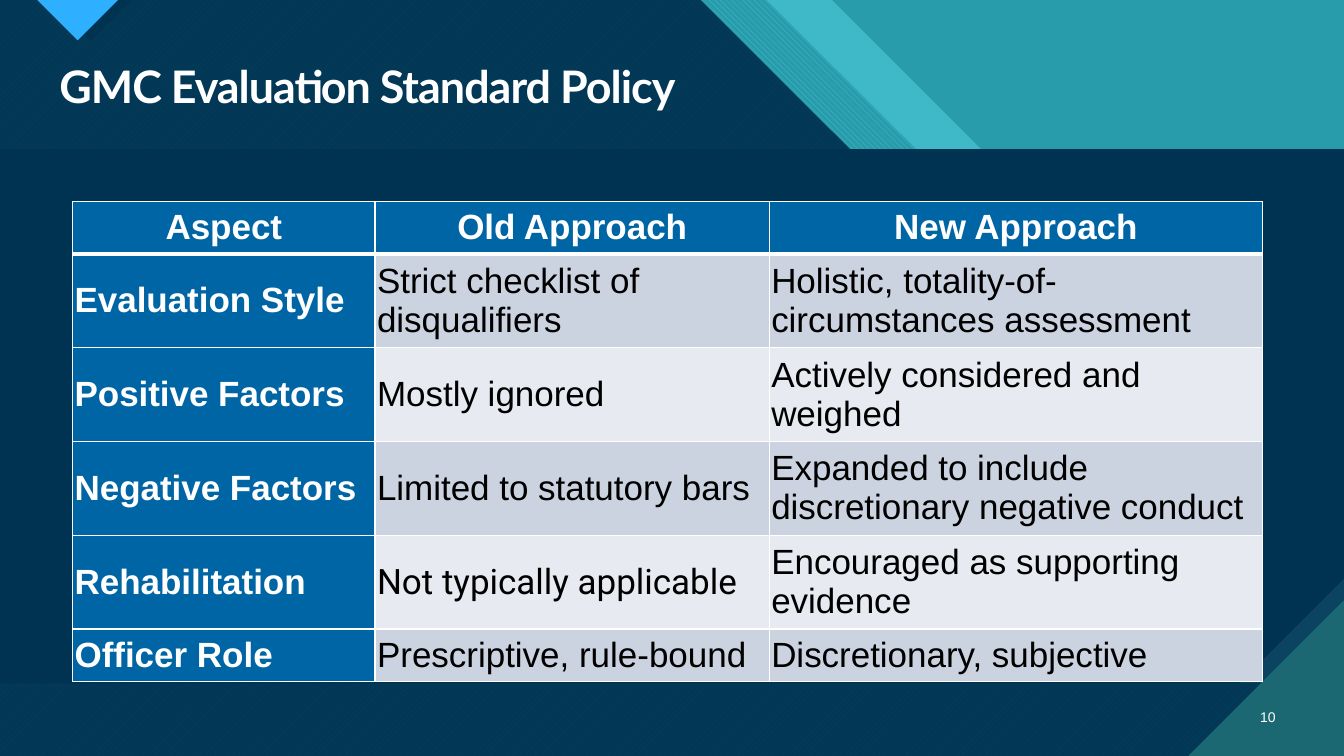
from dataclasses import dataclass
from typing import NamedTuple

from lxml.etree import SubElement
from pptx import Presentation
from pptx.dml.color import RGBColor
from pptx.enum.dml import MSO_PATTERN
from pptx.enum.text import MSO_ANCHOR, PP_ALIGN
from pptx.oxml.ns import qn
from pptx.util import Inches, Pt


@dataclass(frozen=True)
class Theme:
    navy: str = "003352"
    steel: str = "0C4360"
    teal: str = "299CAB"
    aqua: str = "47C3D3"
    deep_teal: str = "1B6872"
    sky: str = "2FAFFF"
    header: str = "0065A4"
    odd_row: str = "CCD3E0"
    even_row: str = "E7EAF0"
    white: str = "FFFFFF"
    black: str = "000000"
    title_font: str = "Lato"
    body_font: str = "Arial"
    accent_font: str = "Roboto"
    title_size: int = 32
    table_size: int = 25
    number_size: int = 10


class Panel(NamedTuple):
    points: list[tuple[float, float]]
    color: str
    back_color: str = ""
    pattern: MSO_PATTERN | None = None
    opacity: int = 100


class Label(NamedTuple):
    text: str
    box: tuple[float, float, float, float]
    font: str
    size: int
    bold: bool = False
    align: PP_ALIGN = PP_ALIGN.LEFT
    line_spacing: float = 1.0
    tracking: float = 0


THEME = Theme()
WIDTH, HEIGHT = 13.33, 7.5
BAND_TOP, BAND_BOTTOM, SNIP = 1.48, 6.78, 1.04

NAVY_FIELD = [(0, 0), (6.95, 0), (9.92, 2.97), (11.18, 2.97),
              (WIDTH, 5.12), (WIDTH, HEIGHT), (0, HEIGHT)]
HATCHED_FIELD = [(0, 0), (7.6, 0), (10.58, 2.97), (11.84, 2.97),
                 (WIDTH, 4.47), (WIDTH, HEIGHT), (0, HEIGHT)]
AQUA_FIELD = [(0, 0), (8.25, 0), (11.22, 2.97), (12.34, 2.97),
              (WIDTH, 3.96), (WIDTH, HEIGHT), (0, HEIGHT)]
BAND = [(0, BAND_TOP), (WIDTH, BAND_TOP), (WIDTH, BAND_BOTTOM), (0, BAND_BOTTOM)]
SNIPPED_BAND = [(0, BAND_TOP), (WIDTH, BAND_TOP), (WIDTH, BAND_BOTTOM - SNIP),
                (WIDTH - SNIP, BAND_BOTTOM), (0, BAND_BOTTOM)]

PANELS = [
    Panel(AQUA_FIELD, THEME.aqua, opacity=74),
    Panel(HATCHED_FIELD, THEME.aqua, THEME.teal, MSO_PATTERN.WIDE_DOWNWARD_DIAGONAL),
    Panel(NAVY_FIELD, THEME.aqua, THEME.deep_teal, MSO_PATTERN.WIDE_UPWARD_DIAGONAL),
    Panel(NAVY_FIELD, THEME.navy, opacity=90),
    Panel([(0.48, 0), (1.31, 0), (0.9, 0.41)], THEME.navy),
    Panel([(0.37, 0), (1.17, 0), (0.77, 0.4)],
          THEME.sky, THEME.deep_teal, MSO_PATTERN.DARK_HORIZONTAL),
    Panel(BAND, THEME.steel, THEME.deep_teal, MSO_PATTERN.DARK_VERTICAL),
    Panel(SNIPPED_BAND, THEME.navy),
    Panel([(11.79, HEIGHT), (WIDTH, HEIGHT), (WIDTH, 5.96)],
          THEME.deep_teal, THEME.aqua, MSO_PATTERN.DARK_HORIZONTAL),
]

LABELS = [
    Label("GMC Evaluation Standard Policy", (0.49, 0.59, 12.26, 0.59),
          THEME.title_font, THEME.title_size, bold=True, line_spacing=0.9, tracking=-0.7),
    Label("10", (12.31, 6.91, 0.44, 0.4), THEME.body_font, THEME.number_size,
          align=PP_ALIGN.RIGHT),
]

COMPARISON = [
    ("Aspect", "Old Approach", "New Approach"),
    ("Evaluation Style", "Strict checklist of disqualifiers",
     "Holistic, totality-of-circumstances assessment"),
    ("Positive Factors", "Mostly ignored", "Actively considered and weighed"),
    ("Negative Factors", "Limited to statutory bars",
     "Expanded to include discretionary negative conduct"),
    ("Rehabilitation", "Not typically applicable", "Encouraged as supporting evidence"),
    ("Officer Role", "Prescriptive, rule-bound", "Discretionary, subjective"),
]
ACCENT_CELL = (4, 1)
COLUMN_WIDTHS = [3, 3.91, 4.89]
ROW_HEIGHTS = [0.52, 0.93, 0.93, 0.93, 0.93, 0.52]


def rgb(color: str) -> RGBColor:
    return RGBColor.from_string(color)


def draw_panel(slide, panel: Panel) -> None:
    start, *rest = [(Inches(x), Inches(y)) for x, y in panel.points]
    builder = slide.shapes.build_freeform(*start)
    builder.add_line_segments(rest, close=True)
    shape = builder.convert_to_shape()
    shape.shadow.inherit = False
    shape.line.fill.background()
    if panel.pattern is not None:
        shape.fill.patterned()
        shape.fill.pattern = panel.pattern
        shape.fill.fore_color.rgb = rgb(panel.color)
        shape.fill.back_color.rgb = rgb(panel.back_color)
        return
    shape.fill.solid()
    shape.fill.fore_color.rgb = rgb(panel.color)
    if panel.opacity < 100:
        color = shape.element.spPr.find(qn("a:solidFill")).find(qn("a:srgbClr"))
        SubElement(color, qn("a:alpha"), val=str(panel.opacity * 1000))


def style_font(font, name: str, size: int, color: str, bold: bool) -> None:
    font.name = name
    font.size = Pt(size)
    font.bold = bold
    font.color.rgb = rgb(color)


def draw_label(slide, label: Label) -> None:
    frame = slide.shapes.add_textbox(*map(Inches, label.box)).text_frame
    frame.word_wrap = True
    frame.vertical_anchor = MSO_ANCHOR.MIDDLE
    paragraph = frame.paragraphs[0]
    paragraph.alignment = label.align
    paragraph.line_spacing = label.line_spacing
    run = paragraph.add_run()
    run.text = label.text
    style_font(paragraph.font, label.font, label.size, THEME.white, label.bold)
    if label.tracking:
        run.font._element.set("spc", str(round(label.tracking * 100)))


def add_borders(cell, bottom: int) -> None:
    properties = cell._tc.get_or_add_tcPr()
    for side, points in {"L": 1, "R": 1, "T": 1, "B": bottom}.items():
        line = SubElement(properties, qn(f"a:ln{side}"), w=str(Pt(points)))
        fill = SubElement(line, qn("a:solidFill"))
        SubElement(fill, qn("a:srgbClr"), val=THEME.white)


def draw_cell(cell, text: str, row: int, column: int) -> None:
    is_heading = row == 0 or column == 0
    add_borders(cell, bottom=3 if row == 0 else 1)
    cell.fill.solid()
    body_fill = THEME.odd_row if row % 2 else THEME.even_row
    cell.fill.fore_color.rgb = rgb(THEME.header if is_heading else body_fill)
    cell.margin_left = cell.margin_right = Inches(0.02)
    cell.margin_top = cell.margin_bottom = Inches(0.02)
    cell.vertical_anchor = MSO_ANCHOR.MIDDLE
    cell.text = text
    paragraph = cell.text_frame.paragraphs[0]
    paragraph.alignment = PP_ALIGN.CENTER if row == 0 else PP_ALIGN.LEFT
    font_name = THEME.accent_font if (row, column) == ACCENT_CELL else THEME.body_font
    color = THEME.white if is_heading else THEME.black
    style_font(paragraph.font, font_name, THEME.table_size, color, is_heading)


def draw_comparison(slide) -> None:
    table = slide.shapes.add_table(
        len(ROW_HEIGHTS), len(COLUMN_WIDTHS), Inches(0.72), Inches(2),
        Inches(sum(COLUMN_WIDTHS)), Inches(sum(ROW_HEIGHTS))).table
    for column, width in zip(table.columns, COLUMN_WIDTHS):
        column.width = Inches(width)
    for row, height in zip(table.rows, ROW_HEIGHTS):
        row.height = Inches(height)
    for row_index, texts in enumerate(COMPARISON):
        for column_index, text in enumerate(texts):
            draw_cell(table.cell(row_index, column_index), text, row_index, column_index)


def main() -> None:
    deck = Presentation()
    deck.slide_width, deck.slide_height = Inches(WIDTH), Inches(HEIGHT)
    slide = deck.slides.add_slide(deck.slide_layouts[6])
    slide.background.fill.solid()
    slide.background.fill.fore_color.rgb = rgb(THEME.teal)
    for panel in PANELS:
        draw_panel(slide, panel)
    for label in LABELS:
        draw_label(slide, label)
    draw_comparison(slide)
    deck.save("out.pptx")


if __name__ == "__main__":
    main()
